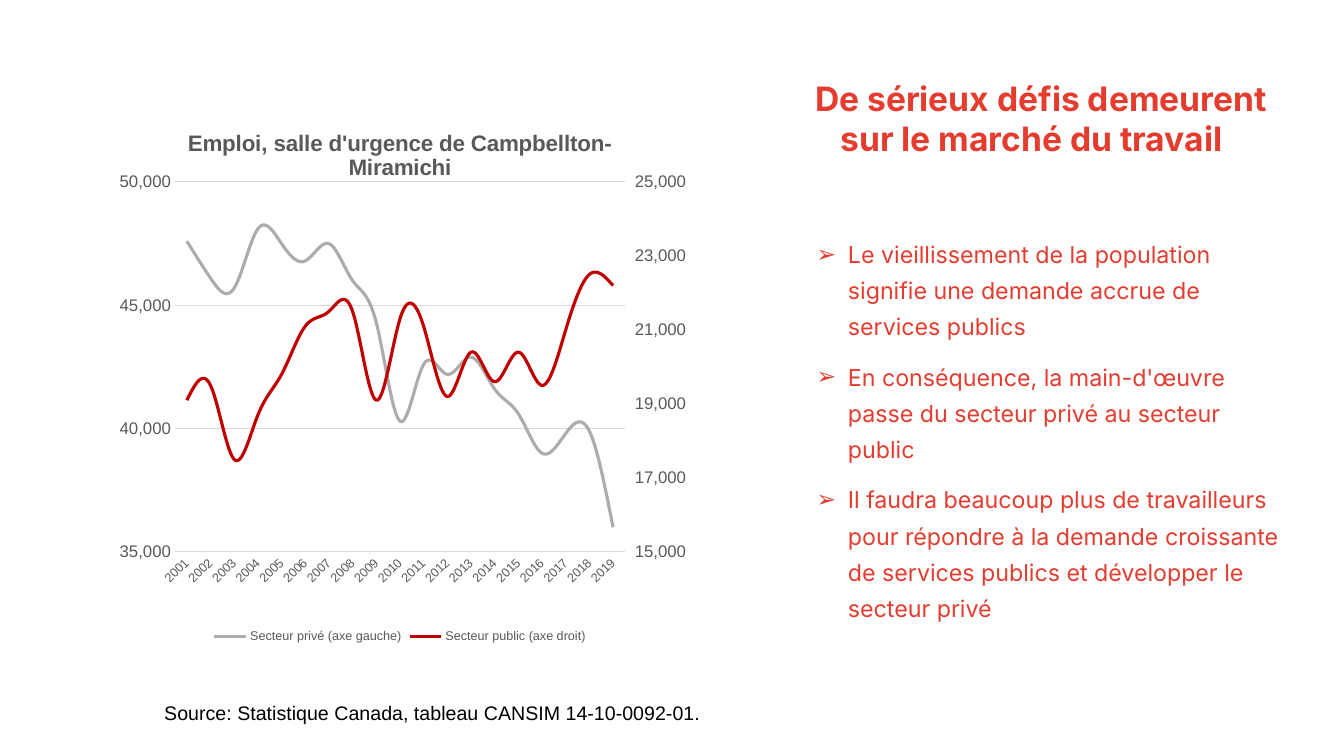
from copy import deepcopy

from lxml import etree
from pptx import Presentation
from pptx.chart.axis import ValueAxis
from pptx.chart.data import CategoryChartData
from pptx.dml.color import RGBColor
from pptx.enum.chart import XL_CHART_TYPE, XL_LEGEND_POSITION, XL_TICK_MARK
from pptx.oxml.ns import qn
from pptx.util import Cm, Pt

LINE_CHART = XL_CHART_TYPE.LINE
LEGEND_BOTTOM = XL_LEGEND_POSITION.BOTTOM
NO_TICK = XL_TICK_MARK.NONE
OUTSIDE_TICK = XL_TICK_MARK.OUTSIDE

COLORS = {"red": "E43D30", "private": "AFABAB", "public": "C00000",
          "label": "595959", "grid": "D9D9D9", "black": "000000"}

HEADING = "De sérieux défis demeurent sur le marché du travail"
POINTS = [
    "Le vieillissement de la population signifie une demande accrue de services publics",
    "En conséquence, la main-d'œuvre passe du secteur privé au secteur public",
    "Il faudra beaucoup plus de travailleurs pour répondre à la demande croissante "
    "de services publics et développer le secteur privé",
]
SOURCE = "Source: Statistique Canada, tableau CANSIM 14-10-0092-01."
CHART_TITLE = "Emploi, salle d'urgence de Campbellton-Miramichi"
YEARS = [str(year) for year in range(2001, 2020)]
SECTORS = [
    ("Secteur privé (axe gauche)", "private",
     [47600, 46100, 45700, 48100, 47500, 46800, 47500, 46000, 44300, 40300,
      42600, 42200, 42900, 41600, 40600, 39000, 39800, 39900, 36000]),
    ("Secteur public (axe droit)", "public",
     [19100, 19500, 17500, 18700, 19800, 21100, 21500, 21500, 19100, 21300,
      21100, 19200, 20400, 19600, 20400, 19500, 21000, 22500, 22200]),
]
LEFT_SCALE = (35000, 50000, 5000)
RIGHT_SCALE = (15000, 25000, 2000)
PLOT_AREA = {"x": 0.119, "y": 0.136, "w": 0.762, "h": 0.686}

HEADING_BOX = (Cm(19.66), Cm(1.83), Cm(12.93), Cm(3.3))
POINTS_BOX = (Cm(19.69), Cm(5.72), Cm(12.93), Cm(11))
CHART_BOX = (Cm(2.64), Cm(2.74), Cm(14.88), Cm(13.59))
SOURCE_BOX = (Cm(3.89), Cm(17.53), Cm(22.78), Cm(0.86))


def rgb(name):
    return RGBColor.from_string(COLORS[name])


def style_font(font, face, size, color, bold=False):
    font.name, font.size, font.bold = face, Pt(size), bold
    font.color.rgb = rgb(color)


def add_text(slide, box, paragraphs, face, size, color, bold=False):
    frame = slide.shapes.add_textbox(*box).text_frame
    frame.word_wrap = True
    frame.text = "\n".join(paragraphs)
    for paragraph in frame.paragraphs:
        for run in paragraph.runs:
            style_font(run.font, face, size, color, bold)
    return frame.paragraphs


def hang(paragraph, margin, indent):
    properties = paragraph._p.get_or_add_pPr()
    properties.set("marL", str(Cm(margin)))
    properties.set("indent", str(Cm(-indent)))
    return properties


def add_bullet(properties):
    color = etree.SubElement(properties, qn("a:buClr"))
    etree.SubElement(color, qn("a:srgbClr"), val=COLORS["red"])
    etree.SubElement(properties, qn("a:buFont"), typeface="Arial")
    etree.SubElement(properties, qn("a:buChar"), char="➢")


def scale_axis(axis, scale):
    axis.minimum_scale, axis.maximum_scale, axis.major_unit = scale


def set_plot_area(plot_area):
    for layout in plot_area.findall(qn("c:layout")):
        plot_area.remove(layout)
    layout = etree.Element(qn("c:layout"))
    manual = etree.SubElement(layout, qn("c:manualLayout"))
    etree.SubElement(manual, qn("c:layoutTarget"), val="inner")
    for side in "xy":
        etree.SubElement(manual, qn(f"c:{side}Mode"), val="edge")
    for side, share in PLOT_AREA.items():
        etree.SubElement(manual, qn(f"c:{side}"), val=str(share))
    plot_area.insert(0, layout)


def move_to_right_axis(plot_area):
    """Give the second series its own line plot and a value axis on the right."""
    left_plot = plot_area.find(qn("c:lineChart"))
    right_plot = deepcopy(left_plot)
    left_plot.addnext(right_plot)
    left_plot.remove(left_plot.findall(qn("c:ser"))[1])
    right_plot.remove(right_plot.findall(qn("c:ser"))[0])

    category = plot_area.find(qn("c:catAx"))
    value = plot_area.find(qn("c:valAx"))
    right_category, right_value = deepcopy(category), deepcopy(value)
    value.addnext(right_value)
    right_value.addnext(right_category)
    new_ids = {category.find(qn("c:axId")).get("val"): "50010",
               value.find(qn("c:axId")).get("val"): "50020"}
    for part in (right_plot, right_category, right_value):
        for tag in ("c:axId", "c:crossAx"):
            for reference in part.findall(qn(tag)):
                reference.set("val", new_ids[reference.get("val")])

    right_category.find(qn("c:delete")).set("val", "1")
    right_value.find(qn("c:axPos")).set("val", "r")
    right_value.find(qn("c:crosses")).set("val", "max")
    axis = ValueAxis(right_value)
    axis.has_major_gridlines = False
    axis.major_tick_mark = OUTSIDE_TICK
    scale_axis(axis, RIGHT_SCALE)


def add_employment_chart(slide):
    data = CategoryChartData(number_format="#,##0")
    data.categories = YEARS
    for name, _, jobs in SECTORS:
        data.add_series(name, jobs)
    chart = slide.shapes.add_chart(LINE_CHART, *CHART_BOX, data).chart
    style_font(chart.font, "Arial", 10, "black")

    chart.has_title = True
    title = chart.chart_title.text_frame
    title.text = CHART_TITLE
    style_font(title.paragraphs[0].runs[0].font, "Arial", 16, "label", True)
    chart.chart_title.include_in_layout = False

    chart.has_legend = True
    chart.legend.position = LEGEND_BOTTOM
    chart.legend.include_in_layout = False
    style_font(chart.legend.font, "Arial", 9, "label")

    chart.plots[0].vary_by_categories = False
    for series, (_, color, _) in zip(chart.plots[0].series, SECTORS):
        series.smooth = True
        series.format.line.color.rgb = rgb(color)
        series.format.line.width = Pt(2.25)

    years, jobs = chart.category_axis, chart.value_axis
    for axis, size in ((years, 9), (jobs, 12)):
        axis.major_tick_mark = axis.minor_tick_mark = NO_TICK
        style_font(axis.tick_labels.font, "Arial", size, "label")
    years._element.find(qn("c:txPr")).find(qn("a:bodyPr")).set("rot", "-2700000")
    jobs.tick_labels.number_format = "#,##0"
    jobs.tick_labels.number_format_is_linked = False
    jobs.has_major_gridlines = True
    for line in (years.format.line, jobs.major_gridlines.format.line):
        line.color.rgb = rgb("grid")
        line.width = Pt(0.75)
    jobs.format.line.fill.background()
    scale_axis(jobs, LEFT_SCALE)

    plot_area = jobs._element.getparent()
    move_to_right_axis(plot_area)
    set_plot_area(plot_area)


def main():
    deck = Presentation()
    deck.slide_width, deck.slide_height = Cm(33.87), Cm(19.05)
    slide = deck.slides.add_slide(deck.slide_layouts[6])

    heading = add_text(slide, HEADING_BOX, [HEADING], "Inter", 24, "red", True)
    hang(heading[0], 1.27, 0.64)
    points = add_text(slide, POINTS_BOX, POINTS, "Inter", 16.6, "red")
    for index, point in enumerate(points):
        add_bullet(hang(point, 1.43, 0.79))
        point.line_spacing = 1.3
        point.space_before = Pt(10 if index else 0)
    add_employment_chart(slide)
    add_text(slide, SOURCE_BOX, [SOURCE], "Arial", 14, "black")
    deck.save("out.pptx")


if __name__ == "__main__":
    main()
